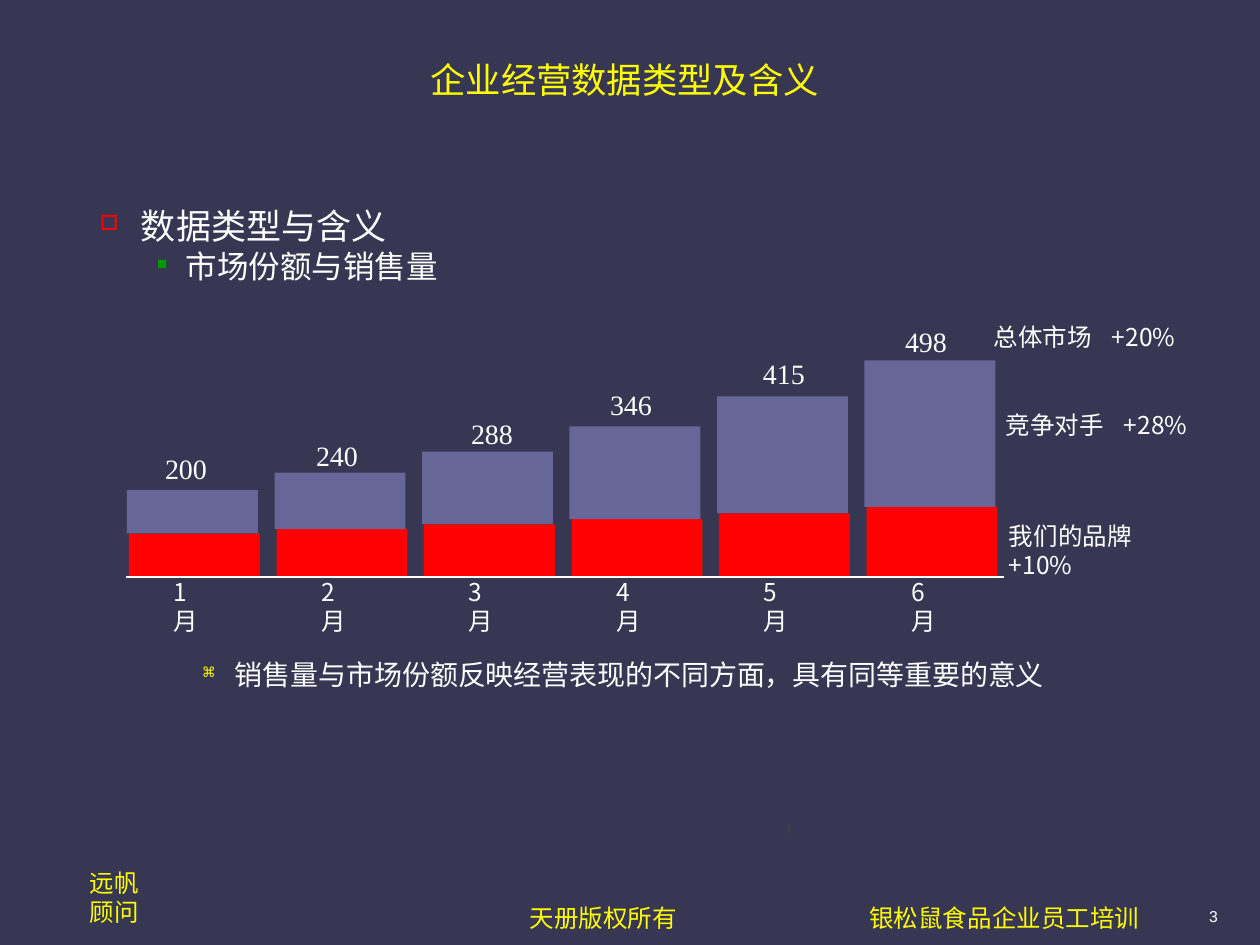
from dataclasses import dataclass
from lxml.etree import SubElement
from pptx import Presentation
from pptx.dml.color import RGBColor
from pptx.enum.shapes import MSO_CONNECTOR as Connector, MSO_SHAPE as Shape
from pptx.enum.text import MSO_ANCHOR as Anchor, PP_ALIGN as Align
from pptx.oxml.ns import qn
from pptx.util import Emu, Pt

SCALE = 914400 / 126


@dataclass(frozen=True)
class Theme:
    """Colours, fonts and type sizes of the slide."""
    background: str = "373753"
    accent: str = "FFFF00"
    ink: str = "FFFFFF"
    brand: str = "FF0100"
    rivals: str = "666699"
    tick: str = "414141"
    square: str = "FF0000"
    block: str = "009900"
    sans: str = "Noto Sans CJK SC"
    serif: str = "Times New Roman"
    number: str = "Arial"
    title_size: float = 20.2
    topic_size: int = 20
    subtopic_size: int = 18
    note_size: int = 16
    label_size: int = 14
    number_size: int = 9


THEME = Theme()


def px(length):
    """Turn px into EMU."""
    return Emu(round(length * SCALE))


def rgb(colour):
    """Turn a hex string into a colour."""
    return RGBColor.from_string(colour)


def text_frame(slide, left, top, width, height, inset=6, wrap=True, anchor=Anchor.TOP):
    """Add a text box and return its frame."""
    frame = slide.shapes.add_textbox(px(left), px(top), px(width), px(height)).text_frame
    frame.margin_left = frame.margin_right = px(inset)
    frame.margin_top = frame.margin_bottom = px(inset)
    frame.word_wrap = wrap
    frame.vertical_anchor = anchor
    return frame


def write(frame, text, size=THEME.label_size, colour=THEME.ink, font=THEME.sans,
          align=Align.LEFT, bullet=None, indent=(0, 0), tab=None, spacing=None):
    """Write one formatted paragraph at the end of a frame."""
    paragraph = frame.paragraphs[0] if not frame.text else frame.add_paragraph()
    paragraph.alignment = align
    if spacing:
        paragraph.line_spacing = spacing
    properties = paragraph._p.get_or_add_pPr()
    if bullet:
        mark, mark_colour, percent = bullet
        margin, hanging = indent
        properties.set("marL", str(px(margin)))
        properties.set("indent", str(-px(hanging)))
        SubElement(SubElement(properties, qn("a:buClr")), qn("a:srgbClr"), val=mark_colour)
        SubElement(properties, qn("a:buSzPct"), val=str(percent * 1000))
        SubElement(properties, qn("a:buChar"), char=mark)
    if tab:
        SubElement(SubElement(properties, qn("a:tabLst")), qn("a:tab"), pos=str(px(tab)), algn="l")
    run = paragraph.add_run()
    run.text = text
    run.font.size = Pt(size)
    run.font.name = font
    run.font.color.rgb = rgb(colour)
    SubElement(run._r.get_or_add_rPr(), qn("a:ea"), typeface=font)


def bar(slide, left, top, width, height, colour):
    """Add one plain bar segment."""
    segment = slide.shapes.add_shape(Shape.RECTANGLE, px(left), px(top), px(width), px(height))
    segment.shadow.inherit = False
    segment.fill.solid()
    segment.fill.fore_color.rgb = rgb(colour)
    segment.line.fill.background()


def rule(slide, x1, y1, x2, y2, colour):
    """Add a thin straight line."""
    line = slide.shapes.add_connector(Connector.STRAIGHT, px(x1), px(y1), px(x2), px(y2))
    line.line.color.rgb = rgb(colour)
    line.line.width = Pt(1)
    SubElement(line._element.spPr, qn("a:effectLst"))


def heading(slide, left, top, width, height):
    """Place the slide title."""
    frame = text_frame(slide, left, top, width, height, inset=4, anchor=Anchor.MIDDLE)
    write(frame, "企业经营数据类型及含义", size=THEME.title_size, colour=THEME.accent,
          align=Align.CENTER)


def outline(slide, left, top, width, height):
    """Place the topic lines above the bars and the note below them."""
    topics = text_frame(slide, left, top, width, 100)
    write(topics, "数据类型与含义", size=THEME.topic_size,
          bullet=("□", THEME.square, 60), indent=(41, 41))
    write(topics, "市场份额与销售量", size=THEME.subtopic_size,
          bullet=("■", THEME.block, 45), indent=(86, 29))
    note = text_frame(slide, left, top + height - 48, width, 48)
    write(note, "销售量与市场份额反映经营表现的不同方面，具有同等重要的意义",
          size=THEME.note_size, bullet=("⌘", THEME.accent, 50), indent=(135, 33))


def market_bars(slide, left, top, width, height):
    """Place monthly stacked bars with totals, months and growth labels."""
    base, pitch, bar_width, unit = top + height, 147.5, 131, 0.435
    total_places = [(35, 127), (186, 114), (341, 92), (480, 63), (633, 32), (775, 0)]
    totals = [200, 240, 288, 346, 415, 498]
    brand_heights = [100 * 1.1 ** month * unit for month in range(len(totals))]

    for total, (x, y) in zip(totals, total_places):
        frame = text_frame(slide, left + x, top + y, 50, 37, inset=2, wrap=False)
        write(frame, str(total), size=THEME.note_size, font=THEME.serif, align=Align.CENTER)
    for month, brand in enumerate(brand_heights):
        bar(slide, left + 3 + month * pitch, base - brand, bar_width, brand, THEME.brand)
    for month, (total, brand) in enumerate(zip(totals, brand_heights)):
        bar(slide, left + 1 + month * pitch, base - total * unit, bar_width,
            total * unit - brand, THEME.rivals)
    rule(slide, left, base, left + width, base, THEME.ink)
    rule(slide, left + 890, base - 5, left + 890, base - 14, THEME.tick)
    for month in range(len(totals)):
        frame = text_frame(slide, left + 42 + month * pitch, base - 6, 52, 72)
        frame.margin_right = px(14)
        write(frame, f"{month + 1}月")

    for label, x, y in [("总体市场\t+20%", 866, -3), ("竞争对手\t+28%", 878, 85)]:
        frame = text_frame(slide, left + x, top + y, 200, 42, inset=2, wrap=False)
        write(frame, label, tab=118)
    own_brand = text_frame(slide, left + 881, top + 196, 180, 70, inset=2)
    write(own_brand, "我们的品牌 +10%")


def footer(slide, left, top, width, height):
    """Place the adviser, copyright, course name and page number."""
    style = {"colour": THEME.accent, "align": Align.CENTER}
    adviser = text_frame(slide, left, top, 63, height, wrap=False)
    for line in ("远帆", "顾问"):
        write(adviser, line, **style)
    for text, x, span in [("天册版权所有", 440, 161), ("银松鼠食品企业员工培训", 780, 283)]:
        write(text_frame(slide, left + x, top + 35, span, 48, wrap=False), text, **style)
    page = text_frame(slide, left + width - 23, top + 41, 23, 29, wrap=False)
    write(page, "3", size=THEME.number_size, font=THEME.number, align=Align.RIGHT, spacing=0.9)


def main():
    """Build and save the slide."""
    deck = Presentation()
    deck.slide_width, deck.slide_height = px(1260), px(945)
    slide = deck.slides.add_slide(deck.slide_layouts[6])
    slide.background.fill.solid()
    slide.background.fill.fore_color.rgb = rgb(THEME.background)
    footer(slide, 83, 862, 1141, 83)
    heading(slide, 33, 50, 1183, 58)
    outline(slide, 94, 199, 1071, 501)
    market_bars(slide, 126, 323, 878, 254)
    rule(slide, 789, 833, 789, 825, THEME.tick)
    deck.save("out.pptx")


if __name__ == "__main__":
    main()
